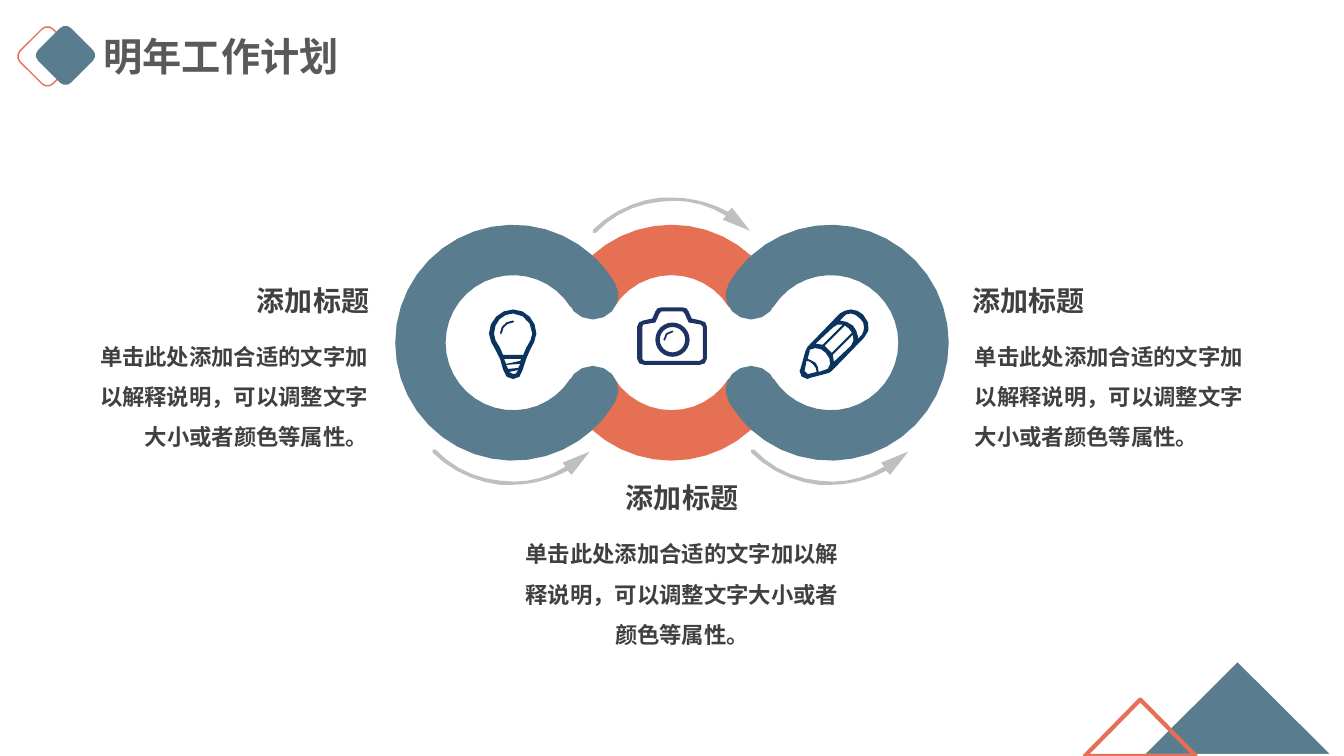
import math
from lxml import etree
from pptx import Presentation
from pptx.dml.color import RGBColor
from pptx.enum.shapes import MSO_SHAPE
from pptx.enum.text import MSO_AUTO_SIZE, PP_ALIGN
from pptx.oxml.ns import qn
from pptx.util import Pt

PX = 9144
ROUNDED, TRIANGLE, DONUT = MSO_SHAPE.ROUNDED_RECTANGLE, MSO_SHAPE.ISOSCELES_TRIANGLE, MSO_SHAPE.DONUT
LEFT, CENTER, RIGHT = PP_ALIGN.LEFT, PP_ALIGN.CENTER, PP_ALIGN.RIGHT
GROW = MSO_AUTO_SIZE.SHAPE_TO_FIT_TEXT
FONT = "Noto Sans CJK SC"
COLORS = {"blue": "597C8F", "orange": "E67054", "white": "FFFFFF", "arrow": "BFBFBF",
          "title": "595959", "text": "404040", "navy": "0A345F", "indigo": "1E3362"}
FORMATS = {
    "title": {"size": Pt(28), "bold": True, "name": FONT},
    "heading": {"size": Pt(20), "bold": True, "name": FONT},
    "body": {"size": Pt(16), "bold": True, "name": FONT},
}
HEADING = "添加标题"
BODY = "单击此处添加合适的文字加以解释说明，可以调整文字大小或者颜色等属性。"
PETAL = [[(0, -86), (-5, -82, -9, -77, -13, -72), (-16, -68, -19, -64, -22, -59), (-32, -43, -19, -23, 0, -23),
          (19, -23, 32, -43, 22, -59), (19, -64, 16, -68, 13, -72), (9, -77, 5, -82, 0, -86)]]
ARROW = [[(157, 3), (130, 14), (133, 18), (114, 30, 91, 35, 69, 32), (44, 30, 21, 19, 4, 1),
          (3, 0, 2, 0, 1, 1), (0, 2, 0, 3, 1, 4), (19, 22, 43, 33, 68, 36),
          (72, 36, 76, 36, 80, 36), (99, 36, 118, 31, 135, 22), (139, 26)]]
BULB = [
    [(24, 0), (11, 0, 0, 11, 0, 24), (0, 32, 8, 41, 11, 49), (15, 62, 15, 69, 24, 69),
     (33, 69, 32, 62, 37, 49), (39, 41, 47, 32, 47, 24), (47, 11, 37, 0, 24, 0)],
    [(29, 58), (19, 59), (17, 55), (31, 54)],
    [(17, 54), (15, 49), (32, 49), (31, 51)],
    [(24, 64), (22, 64, 21, 64, 20, 62), (29, 60), (28, 64, 26, 64, 24, 64)],
    [(34, 45), (14, 45), (13, 43, 12, 40, 11, 38), (7, 33, 5, 28, 5, 24), (5, 13, 13, 4, 24, 4),
     (34, 4, 43, 13, 43, 24), (43, 28, 40, 33, 37, 38), (36, 40, 35, 43, 34, 45)]]
BULB_GLINT = [[(24, 11), (17, 11, 11, 17, 11, 23), (12, 25), (13, 23), (13, 18, 18, 13, 24, 13), (25, 12)]]
LENS_GLINT = [[(35, 23), (30, 23, 26, 27, 26, 32), (27, 33), (28, 32), (28, 28, 31, 25, 35, 25), (36, 24)]]
CAMERA = [
    [(63, 13), (54, 11), (51, 4), (50, 1, 48, 0, 45, 0), (24, 0), (21, 0, 19, 1, 18, 4), (15, 11), (6, 13),
     (3, 13, 0, 16, 0, 19), (0, 51), (0, 55, 3, 57, 7, 57), (62, 57), (66, 57, 69, 55, 69, 51), (69, 19),
     (69, 16, 67, 13, 63, 13)],
    [(65, 51), (62, 53), (7, 53), (5, 51), (5, 19), (6, 17), (18, 15), (22, 6), (24, 4), (45, 4), (47, 6),
     (51, 15), (63, 17), (65, 19)]]
PENCIL = [
    [(63, 5), (60, 2, 55, 0, 51, 0), (47, 0, 43, 2, 40, 4), (8, 37), (6, 41), (1, 59), (0, 61),
     (0, 65, 3, 69, 8, 69), (10, 68), (29, 63), (32, 61), (64, 28), (71, 22, 70, 12, 63, 5)],
    [(34, 51), (33, 45), (53, 25), (54, 29, 54, 33, 51, 36), (34, 52)],
    [(32, 43), (29, 40), (25, 36), (45, 16), (49, 19), (52, 23)],
    [(23, 35), (16, 34), (33, 18), (36, 15, 39, 14, 43, 15)],
    [(9, 64), (8, 64), (5, 61), (7, 51), (9, 51, 12, 52, 14, 55), (16, 57, 17, 59, 17, 62)],
    [(19, 62), (19, 58, 18, 56, 16, 53), (14, 51, 10, 50, 8, 49), (10, 42), (10, 40),
     (15, 37, 22, 38, 26, 43), (31, 48, 32, 55, 28, 59)],
    [(62, 25), (58, 29), (58, 27), (57, 23, 56, 19, 53, 16), (49, 13, 45, 11, 40, 11), (44, 7),
     (45, 5, 48, 4, 51, 4), (54, 4, 57, 6, 60, 9), (63, 11, 64, 14, 64, 18), (64, 20, 63, 23, 62, 25)]]


def paint(shape, fill=None, line=None, width=1):
    """Set the fill and outline of a shape and drop its shadow."""
    shape.shadow.inherit = False
    for part, color in ((shape.fill, fill), (shape.line.fill, line)):
        if color:
            part.solid()
            part.fore_color.rgb = RGBColor.from_string(COLORS[color])
        else:
            part.background()
    if line:
        shape.line.width = Pt(width)


def add_preset(page, kind, box, rotation=0, **look):
    """Add a painted preset shape and return it."""
    shape = page.shapes.add_shape(kind, *(length * PX for length in box))
    shape.rotation = rotation
    paint(shape, **look)
    return shape


def add_text(page, box, text, style, color, align=LEFT, wrap=False, spacing=1.0):
    """Add a text box with one paragraph."""
    frame = page.shapes.add_textbox(*(length * PX for length in box)).text_frame
    frame.word_wrap = wrap
    frame.auto_size = GROW
    para = frame.paragraphs[0]
    para.alignment = align
    para.line_spacing = spacing
    span = para.add_run()
    span.text = text
    for key, value in FORMATS[style].items():
        setattr(span.font, key, value)
    span.font.color.rgb = RGBColor.from_string(COLORS[color])
    etree.SubElement(span.font._element, qn("a:ea"), typeface=FONT)


def flatten(contour):
    """Turn points and cubic curves into points, with more steps on longer curves."""
    points = []
    for part in contour:
        if len(part) == 2:
            points.append(part)
            continue
        knots = (points[-1], part[:2], part[2:4], part[4:])
        steps = max(1, round(0.6 * math.sqrt(sum(map(math.dist, knots, knots[1:])))))
        for step in range(1, steps + 1):
            t = step / steps
            weights = ((1 - t) ** 3, 3 * t * (1 - t) ** 2, 3 * t * t * (1 - t), t ** 3)
            points.append(tuple(sum(w * knot[axis] for w, knot in zip(weights, knots)) for axis in (0, 1)))
    return points


def add_outline(page, contours, left, top, color, flip=1):
    """Add a filled freeform at an offset, turned upside down when flip is -1."""
    builder = None
    for contour in contours:
        points = [((left + x) * PX, (top + flip * y) * PX) for x, y in flatten(contour)]
        if builder is None:
            builder = page.shapes.build_freeform(*points[0], scale=1.0)
        else:
            builder.move_to(*points[0])
        builder.add_line_segments(points[1:], close=True)
    paint(builder.convert_to_shape(), fill=color)


def add_band(page, left, top, axis, half, color):
    """Add a ring segment that is centred on an axis angle."""
    points = []
    for radius, sweep in ((117, half), (67, -half - 15.5)):
        steps = round(abs(sweep) / 9)
        for step in range(-steps, steps + 1):
            angle = math.radians(axis + sweep * step / steps)
            points.append((radius * math.cos(angle), radius * math.sin(angle)))
    add_outline(page, [points], left, top, color)


def add_header(page, left, top):
    """Place the two diamonds and the slide title."""
    add_preset(page, ROUNDED, (left, top + 6, 46, 46), 45, line="orange")
    add_preset(page, ROUNDED, (left + 18, top + 5, 46, 46), 45, fill="blue")
    add_text(page, (left + 69, top, 256, 57), "明年工作计划", "title", "title")


def add_chain(page, left, top):
    """Place the linked rings, arrows and icons around the middle of the first ring."""
    for x, axis, half, color in ((0, 180, 132.5, "blue"), (157, -90, 42.5, "orange"),
                                 (157, 90, 42.5, "orange"), (315, 0, 132.5, "blue")):
        add_band(page, left + x, top, axis, half, color)
    for joint in (left + 79, left + 236):
        for flip in (1, -1):
            add_outline(page, PETAL, joint, top, "blue", flip)
    for x, y, flip in ((-81, 105, 1), (235, 105, 1), (78, -108, -1)):
        add_outline(page, ARROW, left + x, top + y, "arrow", flip)
    lens = add_preset(page, DONUT, (left + 141, top - 20, 34, 34), fill="indigo")
    lens.adjustments[0] = 0.13
    for contours, x, y, color in ((BULB, -24, -33, "navy"), (BULB_GLINT, -24, -33, "navy"),
                                  (LENS_GLINT, 123, -35, "indigo"), (CAMERA, 123, -35, "indigo"),
                                  (PENCIL, 284, -33, "navy")):
        add_outline(page, contours, left + x, top + y, color)


def add_note(page, box, heading_left, align, heading_align):
    """Place a heading above its explanation."""
    left, top, width, height = box
    add_text(page, (heading_left, top, 132, 44), HEADING, "heading", "text", heading_align)
    add_text(page, (left, top + 46, width, height - 46), BODY, "body", "text", align, True, 1.5)


def add_corner(page, left, top):
    """Place the two triangles at the foot of the slide."""
    add_preset(page, TRIANGLE, (left + 55, top, 193, 96), fill="blue", line="white", width=3)
    add_preset(page, TRIANGLE, (left, top + 40, 110, 56), line="orange", width=3)


def main():
    """Build the slide and save it."""
    deck = Presentation()
    deck.slide_width, deck.slide_height = 1333 * PX, 750 * PX
    page = deck.slides.add_slide(deck.slide_layouts[6])
    add_header(page, 24, 27)
    add_chain(page, 509, 340)
    add_note(page, (80, 276, 295, 177), 244, RIGHT, RIGHT)
    add_note(page, (511, 472, 331, 177), 611, CENTER, LEFT)
    add_note(page, (957, 276, 292, 177), 955, LEFT, LEFT)
    add_corner(page, 1076, 654)
    deck.save("out.pptx")


if __name__ == "__main__":
    main()
